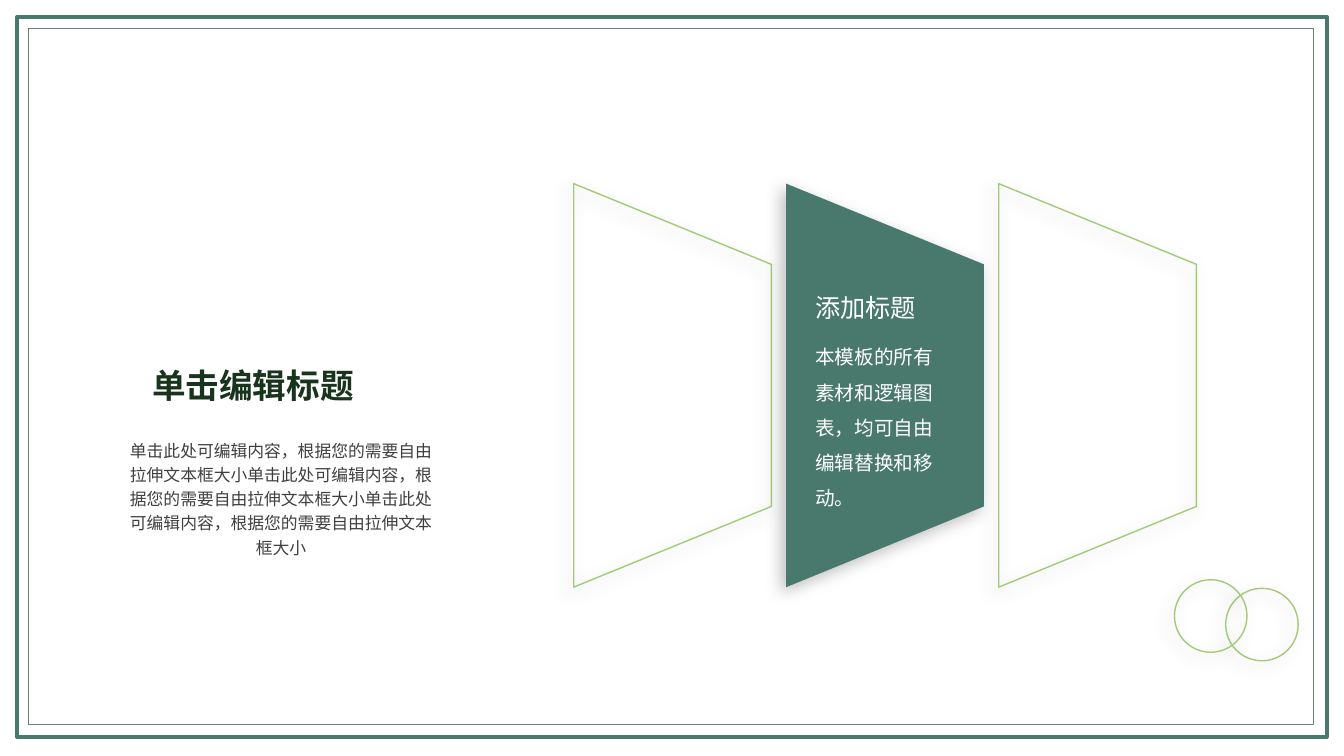
from lxml.etree import SubElement as Sub
from pptx import Presentation
from pptx.dml.color import RGBColor as RGB
from pptx.enum.shapes import MSO_SHAPE as Kind
from pptx.enum.text import MSO_ANCHOR as Anchor, MSO_AUTO_SIZE as Auto, PP_ALIGN as Align
from pptx.oxml.ns import qn
from pptx.util import Pt

COLORS = {
    "green": "49786D",
    "sage": "64846E",
    "lime": "A2CA77",
    "dark": "18341D",
    "gray": "404040",
    "white": "FFFFFF",
    "black": "000000",
}


class Page:
    """Holds the style and the current slide."""

    def __init__(self, deck):
        self.slide = deck.slides.add_slide(deck.slide_layouts[5])
        self.shapes = self.slide.shapes

    def color(self, name):
        return RGB.from_string(COLORS[name])

    def paint(self, shape, fill=None, line=None, width=1, shade=False):
        if fill:
            shape.fill.solid()
            shape.fill.fore_color.rgb = self.color(fill)
        else:
            shape.fill.background()
        if line:
            shape.line.color.rgb = self.color(line)
            shape.line.width = Pt(width)
        else:
            shape.line.fill.background()
        shape.shadow.inherit = False
        if shade:
            self.shade(shape)

    def shade(self, shape):
        """Soft shadow to the lower left."""
        effects = shape._element.spPr.find(qn("a:effectLst"))
        outer = Sub(effects, qn("a:outerShdw"), blurRad=str(Pt(12)), dist=str(Pt(5)),
                    dir=str(135 * 60000), algn="tr", rotWithShape="0")
        tint = Sub(outer, qn("a:srgbClr"), val=COLORS["black"])
        Sub(tint, qn("a:alpha"), val="26000")

    def preset(self, kind, box, **style):
        shape = self.shapes.add_shape(kind, *map(Pt, box))
        self.paint(shape, **style)

    def panel(self, left, top, width, height, **style):
        """Upright panel whose right side is shorter by a fifth at each end."""
        right, end, drop = left + width, top + height, height / 5
        build = self.shapes.build_freeform(Pt(left), Pt(top))
        build.add_line_segments([(Pt(x), Pt(y)) for x, y in (
            (right, top + drop), (right, end - drop), (left, end))])
        self.paint(build.convert_to_shape(), shade=True, **style)

    def label(self, shape, text, size, color, font="Calibri", bold=False,
              align=Align.LEFT, space=1.0, wrap=True, inset=None):
        frame = shape.text_frame
        frame.text = text
        frame.word_wrap = wrap
        frame.auto_size = Auto.SHAPE_TO_FIT_TEXT
        frame.vertical_anchor = Anchor.TOP
        if inset is not None:
            frame.margin_left = frame.margin_right = Pt(inset)
            frame.margin_top = frame.margin_bottom = Pt(inset)
        para = frame.paragraphs[0]
        para.alignment, para.line_spacing = align, space
        para.font.name, para.font.size, para.font.bold = font, Pt(size), bold
        para.font.color.rgb = self.color(color)

    def title(self, box, text, *args, **style):
        shape = self.shapes.title
        shape.left, shape.top, shape.width, shape.height = map(Pt, box)
        self.label(shape, text, *args, **style)

    def text(self, box, text, *args, **style):
        self.label(self.shapes.add_textbox(*map(Pt, box)), text, *args, **style)


def main():
    deck = Presentation()
    deck.slide_width, deck.slide_height = Pt(960), Pt(540)
    page = Page(deck)

    # Double frame
    page.preset(Kind.RECTANGLE, (12.2, 12.2, 935.5, 514.2), line="green", width=3)
    page.preset(Kind.RECTANGLE, (20.2, 20.2, 918, 497.5), line="sage", width=0.5)

    # Three panels, the middle one filled
    for i, look in enumerate(({"line": "lime"}, {"fill": "green"}, {"line": "lime"})):
        page.panel(409.8 + 151.8 * i, 131.2, 141.2, 288.2, **look)

    # Text on the middle panel
    page.text((575.3, 205.2, 87.1, 29), "添加标题", 18, "white", wrap=False)
    page.text((575.3, 234.7, 110.9, 134.6),
              "本模板的所有素材和逻辑图表，均可自由编辑替换和移动。",
              14, "white", space=1.5)

    # Overlapping rings
    for left, top in ((875.5, 420.2), (838.9, 414.1)):
        page.preset(Kind.OVAL, (left, top, 51.8, 51.8), line="lime", shade=True)

    # Heading and paragraph on the left
    page.title((108.7, 260.6, 184.3, 29), "单击编辑标题", 24, "dark", font="Arial",
               bold=True, align=Align.JUSTIFY, inset=0)
    page.text((87.8, 311.8, 226.1, 87.1),
              "单击此处可编辑内容，根据您的需要自由拉伸文本框大小" * 3,
              12, "gray", align=Align.CENTER, space=1.2, inset=0)

    deck.save("out.pptx")


if __name__ == "__main__":
    main()
